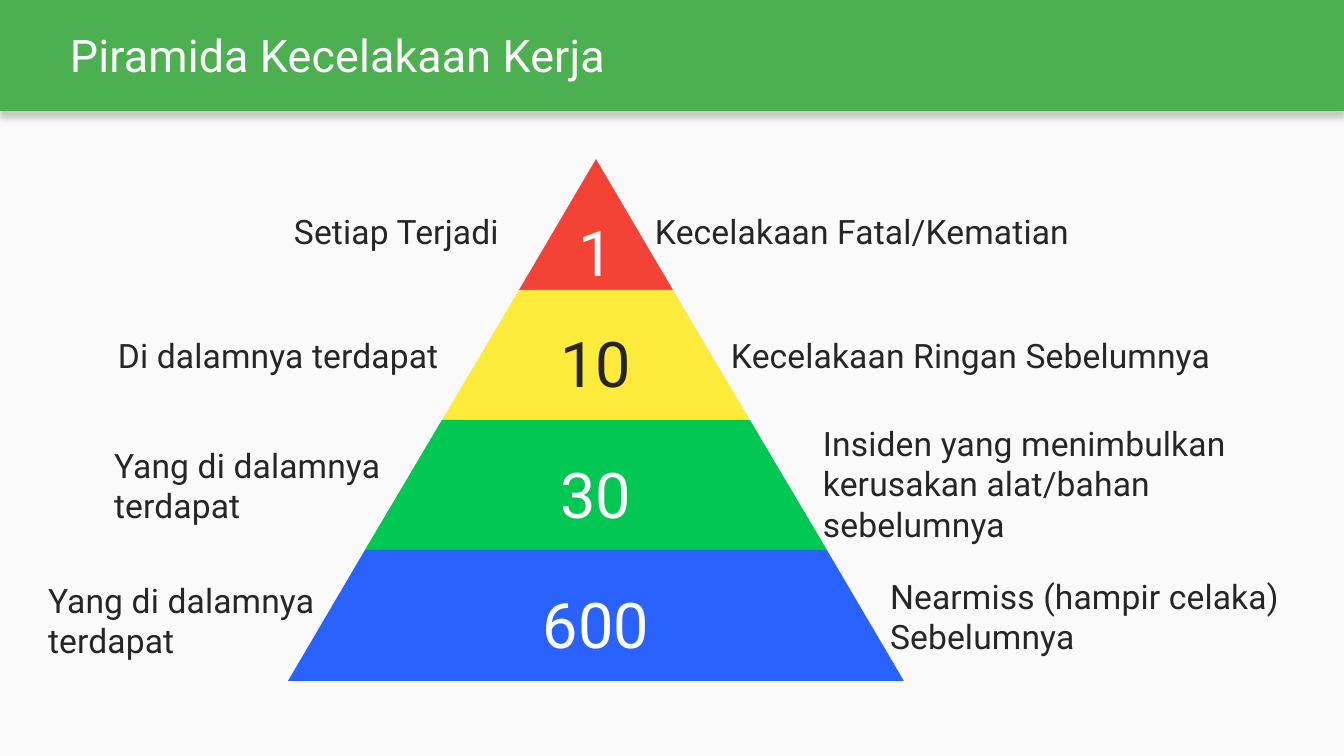
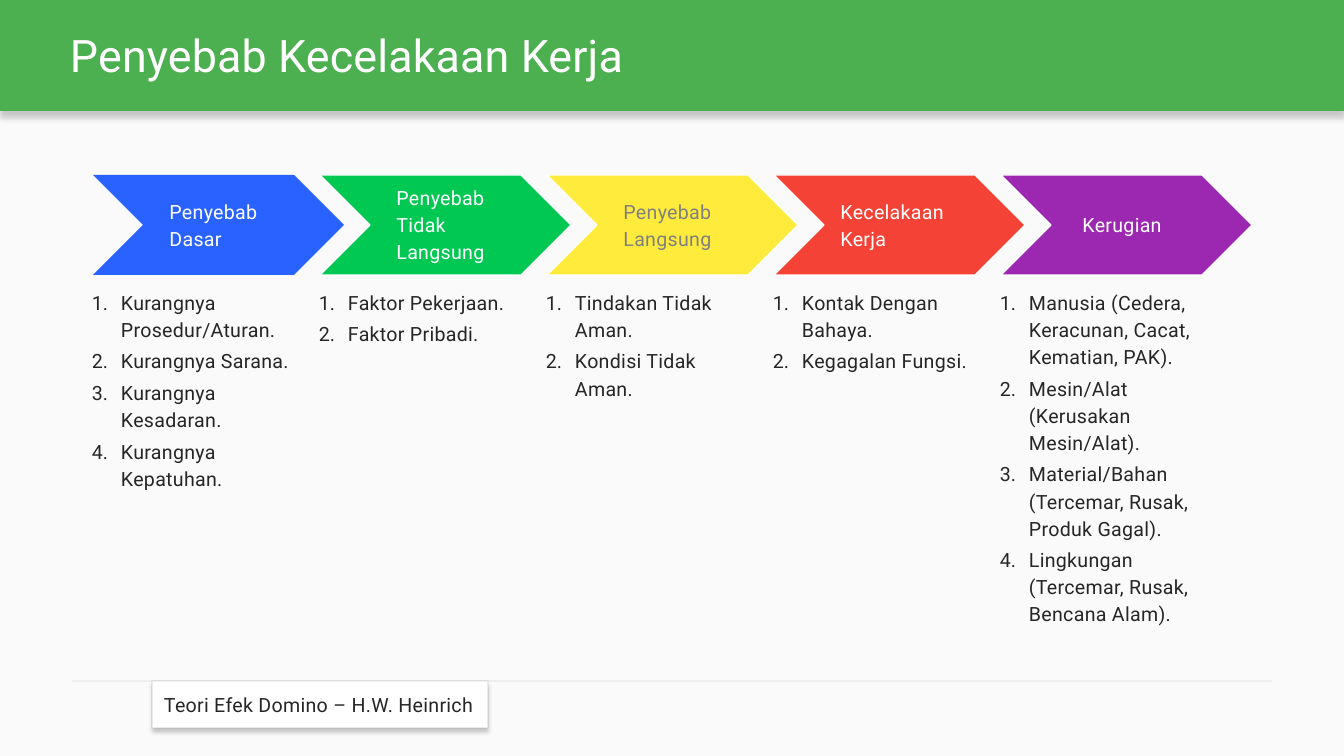
from lxml import etree
from pptx import Presentation
from pptx import util as u
from pptx.dml.color import RGBColor
from pptx.enum import shapes, text
from pptx.oxml.ns import qn

WIDTH, HEIGHT = 1344, 756
PX = u.Inches(7.5) / HEIGHT
COLORS = {
    "background": "FAFAFA", "band": "4CAF50", "white": "FFFFFF", "ink": "262626",
    "grey": "808080", "black": "000000", "red": "F44336", "yellow": "FFEB3B",
    "green": "00C853", "blue": "2962FF", "purple": "9C27B0",
}
TITLE = {"size": 32, "color": "white", "spacing": 10}
SIDE = {"size": 24, "color": "ink", "spacing": 10}
NUMBER = {"size": 45, "color": "white", "align": text.PP_ALIGN.CENTER, "line": 1.15}
LABEL = {"size": 14, "color": "white", "spacing": 20, "line": 1.15}
LIST = {**LABEL, "color": "ink", "before": 3.5}
NOTE = {"size": 14, "color": "ink", "spacing": 20, "align": text.PP_ALIGN.LEFT}

APEX_X, APEX_Y, TIER_HEIGHT, TIER_STEP = 596, 159, 130.5, 77
# fill, number, number colour, number offset, then (text, left, top) on each side
TIERS = [
    ("red", "1", "white", 43,
     ("Setiap Terjadi", 294, 211), ("Kecelakaan Fatal/Kematian", 655, 211)),
    ("yellow", "10", "ink", 24,
     ("Di dalamnya terdapat", 118, 335), ("Kecelakaan Ringan Sebelumnya", 731, 335)),
    ("green", "30", "white", 24,
     ("Yang di dalamnya terdapat", 114, 445),
     ("Insiden yang menimbulkan kerusakan alat/bahan sebelumnya", 823, 423)),
    ("blue", "600", "white", 24,
     ("Yang di dalamnya terdapat", 48, 580),
     ("Nearmiss (hampir celaka) Sebelumnya", 890, 576)),
]

CHEVRON_LEFT, CHEVRON_TOP, CHEVRON_STEP = 93, 175, 227
CHEVRON_WIDTH, CHEVRON_HEIGHT = 251, 100
# fill, label, label colour, label width, causes
STAGES = [
    ("blue", "Penyebab Dasar", "white", 102,
     ["Kurangnya Prosedur/Aturan.", "Kurangnya Sarana.",
      "Kurangnya Kesadaran.", "Kurangnya Kepatuhan."]),
    ("green", "Penyebab Tidak Langsung", "white", 102,
     ["Faktor Pekerjaan.", "Faktor Pribadi."]),
    ("yellow", "Penyebab Langsung", "grey", 102,
     ["Tindakan Tidak Aman.", "Kondisi Tidak Aman."]),
    ("red", "Kecelakaan Kerja", "white", 122,
     ["Kontak Dengan Bahaya.", "Kegagalan Fungsi."]),
    ("purple", "Kerugian", "white", 92,
     ["Manusia (Cedera, Keracunan, Cacat, Kematian, PAK).",
      "Mesin/Alat (Kerusakan Mesin/Alat).",
      "Material/Bahan (Tercemar, Rusak, Produk Gagal).",
      "Lingkungan (Tercemar, Rusak, Bencana Alam)."]),
]
THEORY = "Teori Efek Domino – H.W. Heinrich"


def px(*lengths):
    return [u.Emu(round(length * PX)) for length in lengths]


def rgb(name):
    return RGBColor.from_string(COLORS[name])


def add_child(parent, tag, **attributes):
    return etree.SubElement(parent, qn(tag), {k: str(v) for k, v in attributes.items()})


def set_line(line, color, width, alpha=100):
    line.color.rgb = rgb(color)
    line.width = u.Pt(width)
    if alpha < 100:
        color_element = line.fill._xPr.find(qn("a:solidFill"))[0]
        add_child(color_element, "a:alpha", val=alpha * 1000)


def paint(shape, fill):
    shape.shadow.inherit = False
    shape.fill.solid()
    shape.fill.fore_color.rgb = rgb(fill)
    shape.line.fill.background()


def drop_shadow(shape, size):
    """Cast a soft shadow straight down, blurred and moved by size points."""
    effects = shape._element.spPr.find(qn("a:effectLst"))
    length = u.Pt(size)
    shadow = add_child(effects, "a:outerShdw", blurRad=int(length), dist=int(length),
                       dir=5400000, algn="t", rotWithShape=0)
    color = add_child(shadow, "a:srgbClr", val=COLORS["black"])
    add_child(color, "a:alpha", val=20000)


def write(frame, lines, style, anchor=text.MSO_ANCHOR.TOP, inset=0, numbered=False):
    margin, = px(inset)
    settings = {"word_wrap": True, "vertical_anchor": anchor, "margin_left": margin,
                "margin_right": margin, "margin_top": margin, "margin_bottom": margin}
    for name, value in settings.items():
        setattr(frame, name, value)
    for index, line in enumerate(lines):
        paragraph = frame.add_paragraph() if index else frame.paragraphs[0]
        paragraph.alignment = style.get("align")
        paragraph.line_spacing = style.get("line")
        if index:
            paragraph.space_before = u.Pt(style.get("before", 0))
        if numbered:
            indent, = px(29)
            properties = paragraph._p.get_or_add_pPr()
            properties.set("marL", str(indent))
            properties.set("indent", str(-indent))
            add_child(properties, "a:buFont", typeface="+mj-lt")
            add_child(properties, "a:buAutoNum", type="arabicPeriod")
        run = paragraph.add_run()
        run.text = line
        run.font.name = "Roboto"
        run.font.size = u.Pt(style["size"])
        run.font.color.rgb = rgb(style["color"])
        run._r.get_or_add_rPr().set("spc", str(style.get("spacing", 0)))


def add_text(slide, box, lines, style, **options):
    write(slide.shapes.add_textbox(*px(*box)).text_frame, lines, style, **options)


def add_preset(slide, kind, box, fill):
    shape = slide.shapes.add_shape(kind, *px(*box))
    paint(shape, fill)
    return shape


def add_titled_slide(presentation, title):
    slide = presentation.slides.add_slide(presentation.slide_layouts[6])
    slide.background.fill.solid()
    slide.background.fill.fore_color.rgb = rgb("background")
    band = add_preset(slide, shapes.MSO_SHAPE.RECTANGLE, (0, 0, WIDTH, 111), "band")
    drop_shadow(band, 4.5)
    add_text(slide, (70, 28, 1200, 54), [title], TITLE)
    return slide


def build_pyramid(presentation):
    slide = add_titled_slide(presentation, "Piramida Kecelakaan Kerja")
    for index, (fill, number, color, offset, left_side, right_side) in enumerate(TIERS):
        top = APEX_Y + index * TIER_HEIGHT
        bottom = top + TIER_HEIGHT
        upper, lower = index * TIER_STEP, (index + 1) * TIER_STEP
        corners = [(APEX_X + upper, top), (APEX_X + lower, bottom),
                   (APEX_X - lower, bottom), (APEX_X - upper, top)]
        builder = slide.shapes.build_freeform(*corners[0], scale=PX)
        builder.add_line_segments(corners[1:], close=True)
        paint(builder.convert_to_shape(), fill)
        add_text(slide, (APEX_X - 65, top + offset, 130, 87), [number],
                 {**NUMBER, "color": color})
        for (words, left, text_top), width in ((left_side, 330),
                                               (right_side, 1310 - right_side[1])):
            add_text(slide, (left, text_top, width, 41), [words], SIDE)


def build_causes(presentation):
    slide = add_titled_slide(presentation, "Penyebab Kecelakaan Kerja")
    for index, (fill, label, color, width, causes) in enumerate(STAGES):
        left = CHEVRON_LEFT + index * CHEVRON_STEP
        box = (left, CHEVRON_TOP, CHEVRON_WIDTH, CHEVRON_HEIGHT)
        chevron = add_preset(slide, shapes.MSO_SHAPE.CHEVRON, box, fill)
        if index:
            set_line(chevron.line, "white", 0.96)
        middle = left + CHEVRON_WIDTH / 2 + 2
        add_text(slide, (middle - width / 2, CHEVRON_TOP - 2, width, CHEVRON_HEIGHT),
                 [label], {**LABEL, "color": color}, anchor=text.MSO_ANCHOR.MIDDLE)
        add_text(slide, (left - 1, 287, 202, 342), causes, LIST, numbered=True)

    rule = slide.shapes.add_connector(shapes.MSO_CONNECTOR.STRAIGHT, *px(72, 681, 1272, 681))
    set_line(rule.line, "black", 0.48, alpha=12)
    add_child(rule._element.spPr, "a:effectLst")
    note = add_preset(slide, shapes.MSO_SHAPE.RECTANGLE, (152, 681, 336, 47), "white")
    set_line(note.line, "black", 0.75, alpha=12)
    drop_shadow(note, 3)
    write(note.text_frame, [THEORY], NOTE, anchor=text.MSO_ANCHOR.MIDDLE, inset=12)


def main():
    presentation = Presentation()
    presentation.slide_width, presentation.slide_height = px(WIDTH, HEIGHT)
    build_pyramid(presentation)
    build_causes(presentation)
    presentation.save("out.pptx")


if __name__ == "__main__":
    main()
